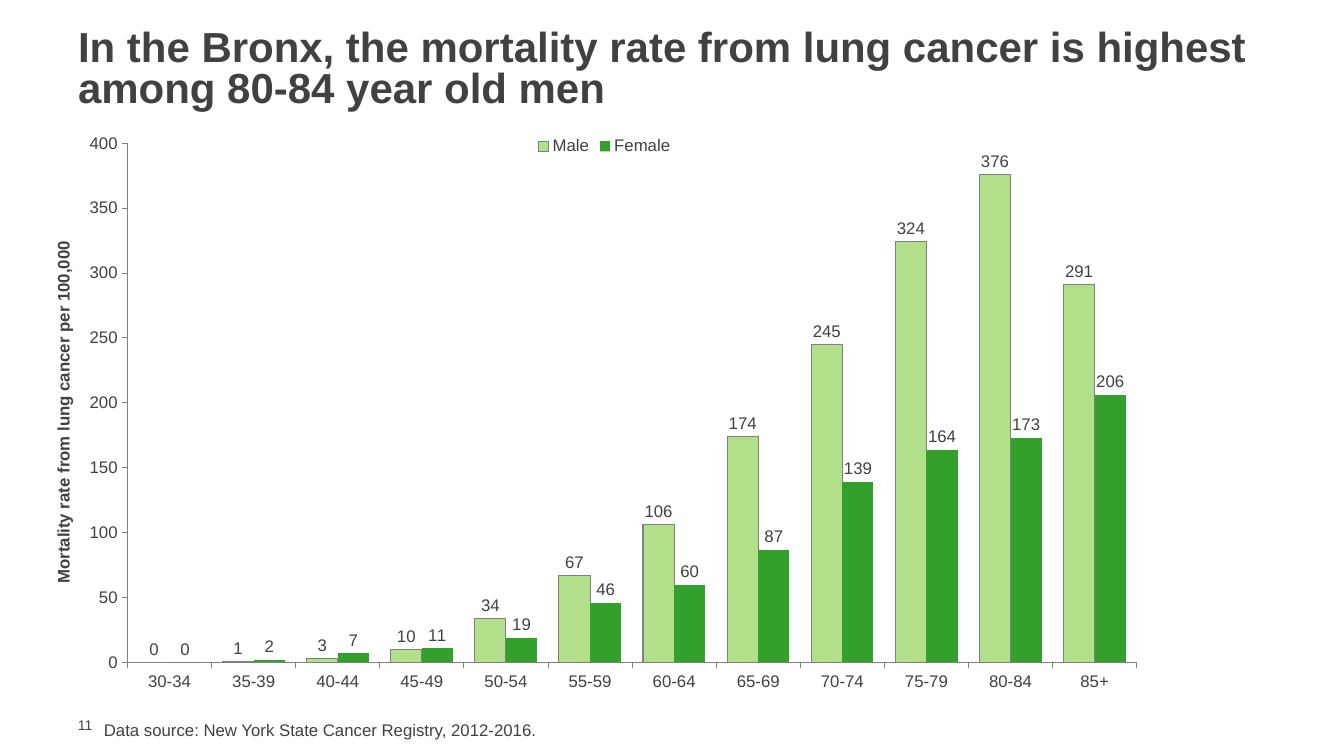
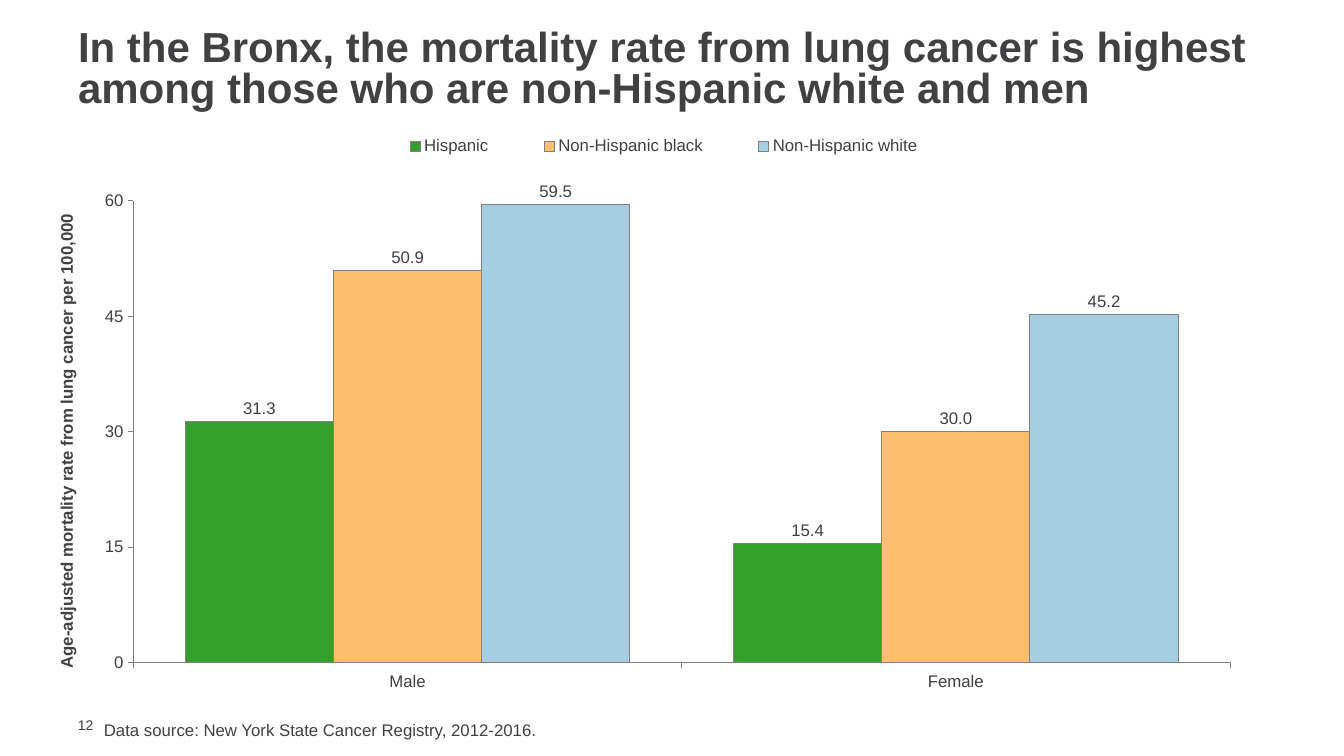
from lxml.etree import SubElement
from pptx import Presentation
from pptx.chart.data import CategoryChartData as Data
from pptx.dml.color import RGBColor as RGB
from pptx.enum.chart import XL_CHART_TYPE as Kind, XL_LABEL_POSITION as Spot
from pptx.enum.chart import XL_LEGEND_POSITION as Side, XL_TICK_MARK as Tick
from pptx.enum.text import MSO_ANCHOR as Anchor, MSO_AUTO_SIZE as Auto, PP_ALIGN as Align
from pptx.oxml.ns import qn
from pptx.util import Pt

FONT = "Arial"
HEX = {"text": "414042", "line": "808080", "lime": "B2DF8A", "green": "33A02C",
       "orange": "FDBF6F", "blue": "A6CEE3", "white": "FFFFFF"}
SIZE = (1344, 756)
TITLE = (68, 25, 1210, 92)
SOURCE = (94, 715, 1000, 30)
NUMBER = (68, 716, 43, 17)
FIRST = 11
NOTE = "Data source: New York State Cancer Registry, 2012-2016."

SLIDES = [
    {"title": "In the Bronx, the mortality rate from lung cancer is highest "
              "among 80-84 year old men",
     "axis": "Mortality rate from lung cancer per 100,000",
     "box": (50, 126, 1109, 577), "plot": (0.07, 0.03, 0.91, 0.9),
     "legend": None, "top": 400, "step": 50, "format": "0",
     "cats": [f"{age}-{age + 4}" for age in range(30, 85, 5)] + ["85+"],
     "series": [
         ("Male", "lime", True, (0, 1, 3, 10, 34, 67, 106, 174, 245, 324, 376, 291)),
         ("Female", "green", False, (0, 2, 7, 11, 19, 46, 60, 87, 139, 164, 173, 206))]},
    {"title": "In the Bronx, the mortality rate from lung cancer is highest "
              "among those who are non-Hispanic white and men",
     "axis": "Age-adjusted mortality rate from lung cancer per 100,000",
     "box": (50, 126, 1192, 577), "plot": (0.07, 0.13, 0.92, 0.8),
     "legend": (0.26, 0.01, 0.51, 0.05), "top": 60, "step": 15, "format": "0.0",
     "cats": ["Male", "Female"],
     "series": [
         ("Hispanic", "green", True, (31.3, 15.4)),
         ("Non-Hispanic black", "orange", True, (50.9, 30.0)),
         ("Non-Hispanic white", "blue", True, (59.5, 45.2))]},
]


def px(num):
    return round(num * 914400 / 100.8)


def color(name):
    return RGB.from_string(HEX[name])


def style(font, size=12, bold=False):
    font.name, font.size, font.bold = FONT, Pt(size), bold
    font.color.rgb = color("text")


def write(frame, text, size=12, bold=False, space=None):
    para = frame.paragraphs[0]
    para.alignment = Align.LEFT
    para.line_spacing = space
    run = para.add_run()
    run.text = text
    style(run.font, size, bold)


def label(slide, box, text, size=12):
    frame = slide.shapes.add_textbox(*map(px, box)).text_frame
    frame.word_wrap = True
    write(frame, text, size=size)
    return frame


def border(line):
    line.color.rgb = color("line")
    line.width = Pt(0.75)


def place(node, box, inner=False):
    for old in node.findall(qn("c:layout")):
        node.remove(old)
    layout = SubElement(node, qn("c:layout"))
    manual = SubElement(layout, qn("c:manualLayout"))
    parts = [("layoutTarget", "inner")] if inner else []
    parts += [("xMode", "edge"), ("yMode", "edge"), *zip("xywh", box)]
    for tag, val in parts:
        SubElement(manual, qn(f"c:{tag}")).set("val", str(val))
    return layout


def plot(slide, item):
    data = Data(number_format=item["format"])
    data.categories = item["cats"]
    for name, _, _, vals in item["series"]:
        data.add_series(name, vals)
    chart = slide.shapes.add_chart(
        Kind.COLUMN_CLUSTERED, *map(px, item["box"]), data).chart
    style(chart.font)
    chart.has_title = False
    area = chart._chartSpace.chart.plotArea
    area.insert(0, place(area, item["plot"], inner=True))

    chart.has_legend = True
    legend = chart.legend
    legend.position = Side.TOP
    legend.include_in_layout = False
    style(legend.font)
    if item["legend"]:
        key = legend._element
        key.find(qn("c:legendPos")).addnext(place(key, item["legend"]))

    vert = chart.value_axis
    for axis in (chart.category_axis, vert):
        axis.has_major_gridlines = False
        axis.major_tick_mark, axis.minor_tick_mark = Tick.OUTSIDE, Tick.NONE
        border(axis.format.line)
        style(axis.tick_labels.font)
    vert.minimum_scale, vert.maximum_scale = 0, item["top"]
    vert.major_unit = item["step"]
    vert.tick_labels.number_format = "0"
    vert.tick_labels.number_format_is_linked = False
    write(vert.axis_title.text_frame, item["axis"], bold=True)

    bars = chart.plots[0]
    bars.gap_width, bars.overlap = 70, 0
    bars.vary_by_categories = False
    for series, (_, tone, edge, _) in zip(bars.series, item["series"]):
        series.format.fill.solid()
        series.format.fill.fore_color.rgb = color(tone)
        if edge:
            border(series.format.line)
        else:
            series.format.line.fill.background()
        tags = series.data_labels
        tags.show_value = True
        tags.position = Spot.OUTSIDE_END
        tags.number_format = item["format"]
        tags.number_format_is_linked = False
        style(tags.font)


def build(deck, num, item):
    slide = deck.slides.add_slide(deck.slide_layouts[5])
    head = slide.shapes.title
    head.left, head.top, head.width, head.height = map(px, TITLE)
    frame = head.text_frame
    frame.word_wrap, frame.auto_size = True, Auto.NONE
    frame.vertical_anchor = Anchor.MIDDLE
    write(frame, item["title"], size=30, bold=True, space=0.8)
    plot(slide, item)
    label(slide, SOURCE, NOTE)
    page = label(slide, NUMBER, str(num), size=10)
    page.vertical_anchor = Anchor.MIDDLE
    page.margin_left = px(10)
    page.margin_top = page.margin_right = page.margin_bottom = 0


def main():
    deck = Presentation()
    deck.slide_width, deck.slide_height = map(px, SIZE)
    fill = deck.slide_master.background.fill
    fill.solid()
    fill.fore_color.rgb = color("white")
    for num, item in enumerate(SLIDES, FIRST):
        build(deck, num, item)
    deck.save("out.pptx")


if __name__ == "__main__":
    main()
